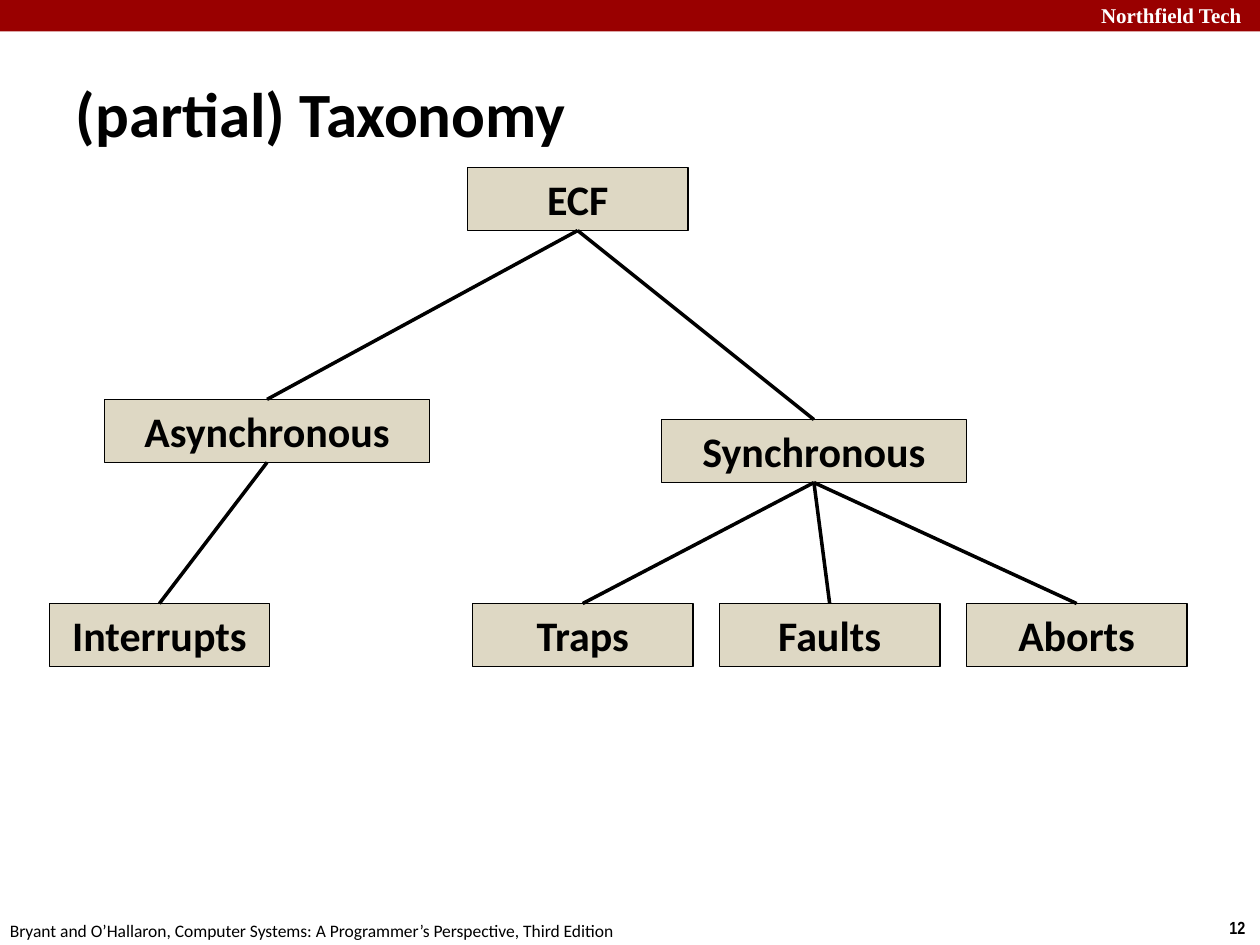
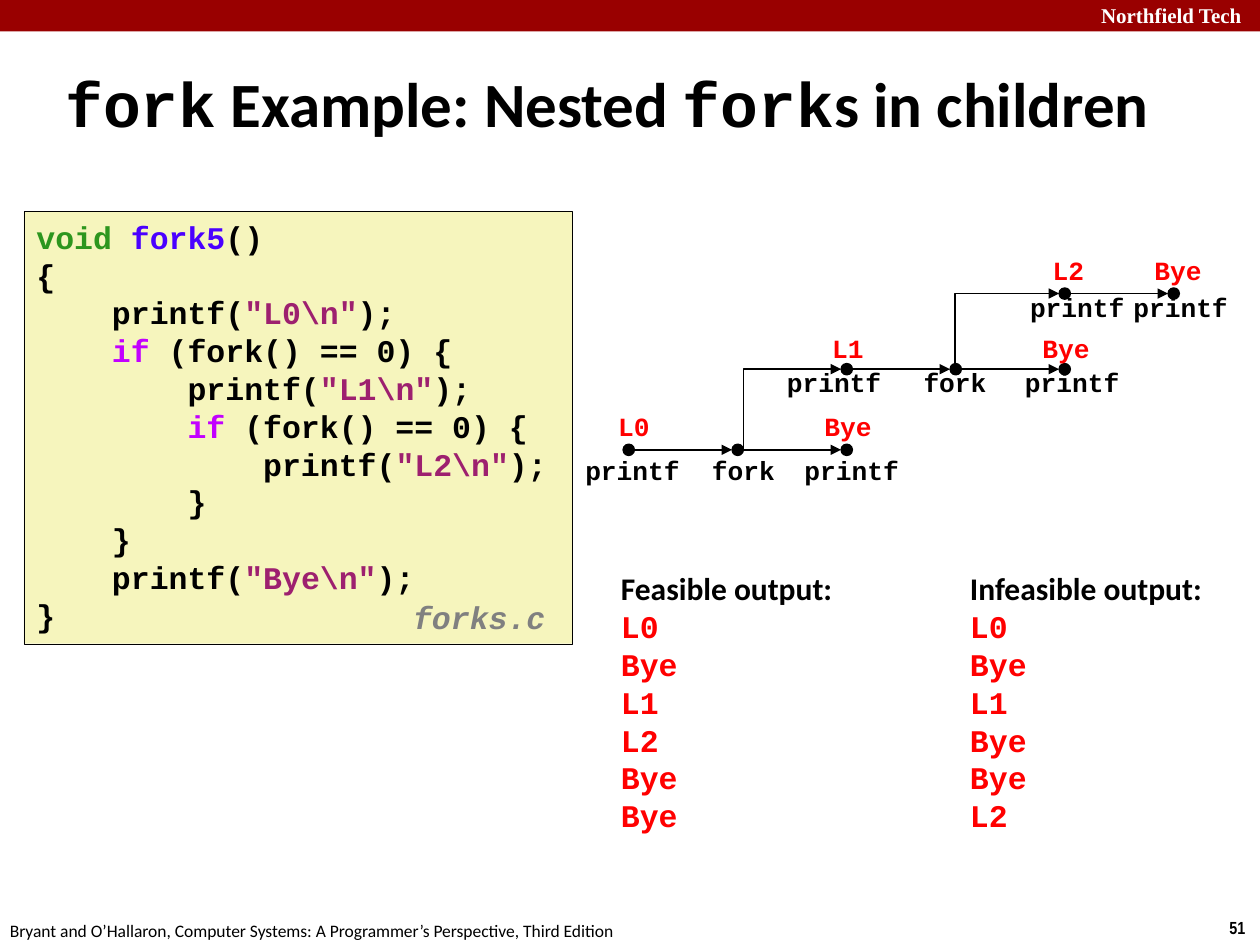
"""Builds two lecture slides: a control flow taxonomy and a nested fork example."""
from lxml.etree import SubElement
from pptx import Presentation
from pptx.dml.color import RGBColor as RGB
from pptx.enum.shapes import MSO_CONNECTOR as CONN, MSO_SHAPE as SHAPE
from pptx.enum.text import MSO_ANCHOR as ANCHOR, PP_ALIGN as ALIGN
from pptx.oxml.ns import qn
from pptx.util import Inches, Pt

BLACK, WHITE, RED = RGB(0, 0, 0), RGB(255, 255, 255), RGB(255, 0, 0)
BAND, TAN, CREAM = RGB(0x99, 0, 0), RGB(0xDE, 0xD8, 0xC4), RGB(0xF6, 0xF5, 0xBD)
GREEN, BLUE, GRAY = RGB(0x2D, 0x96, 0x1E), RGB(0x4A, 0, 0xFF), RGB(0x80, 0x80, 0x80)
PLUM, VIOLET = RGB(0x9D, 0x20, 0x6F), RGB(0xC2, 0, 0xFF)
SANS, MONO = "Calibri", "Courier New"

SCHOOL = "Northfield Tech"
BOOK = "Bryant and O’Hallaron, Computer Systems: A Programmer’s Perspective, Third Edition"

TAXONOMY = {"title": [(" (partial) Taxonomy",)], "box": (0.39, 0.48, 8.3, 0.83), "page": "12"}
FORKS = {
    "title": [("fork", {"name": MONO}), (" Example: Nested ",),
              ("fork", {"name": MONO}), ("s in children",)],
    "box": (0.42, 0.5, 9.22, 0.63), "page": "51",
}

NODES = {
    "ECF": (3.71, 1.33, 1.75),
    "Asynchronous": (0.83, 3.17, 2.58),
    "Synchronous": (5.25, 3.33, 2.42),
    "Interrupts": (0.39, 4.79, 1.75),
    "Traps": (3.75, 4.79, 1.75),
    "Faults": (5.71, 4.79, 1.75),
    "Aborts": (7.67, 4.79, 1.75),
}
CHILDREN = {
    "ECF": ["Asynchronous", "Synchronous"],
    "Asynchronous": ["Interrupts"],
    "Synchronous": ["Traps", "Faults", "Aborts"],
}
NODE_H = 0.5

CODE = [
    [("void ", GREEN), ("fork5", BLUE), ("()", BLACK)],
    [("{", BLACK)],
    [("    printf(", BLACK), ('"L0\\n"', PLUM), (");", BLACK)],
    [("    ", BLACK), ("if", VIOLET), (" (fork() == 0) {", BLACK)],
    [("        printf(", BLACK), ('"L1\\n"', PLUM), (");", BLACK)],
    [("        ", BLACK), ("if", VIOLET), (" (fork() == 0) {", BLACK)],
    [("            printf(", BLACK), ('"L2\\n"', PLUM), (");", BLACK)],
    [("        }", BLACK)],
    [("    }", BLACK)],
    [("    printf(", BLACK), ('"Bye\\n"', PLUM), (");", BLACK)],
    [("}", BLACK)],
]

PROCESSES = [
    {"y": 3.57, "call_top": 3.56, "out_top": 3.21, "first_col": 0, "bend_x": 5.9,
     "events": [("printf", 5.02, "L0", 5.03), ("fork", 5.9, "", 0), ("printf", 6.76, "Bye", 6.73)]},
    {"y": 2.93, "call_top": 2.86, "out_top": 2.59, "first_col": 2, "bend_x": 7.58,
     "events": [("printf", 6.62, "L1", 6.73), ("fork", 7.58, "", 0), ("printf", 8.51, "Bye", 8.46)]},
    {"y": 2.33, "call_top": 2.26, "out_top": 1.97, "first_col": 4, "bend_x": None,
     "events": [("printf", 8.55, "L2", 8.48), ("printf", 9.37, "Bye", 9.35)]},
]
COL_X, COL_STEP, DOT = 4.99, 0.865, 0.09

OUTPUTS = [
    ("Feasible output:", "L0 Bye L1 L2 Bye Bye", (4.83, 4.47, 1.9, 2.22)),
    ("Infeasible output:", "L0 Bye L1 Bye Bye L2", (7.6, 4.47, 2.07, 2.22)),
]


def inches(*values):
    return [Inches(v) for v in values]


def write(sp, lines, align=ALIGN.LEFT, wrap=False, anchor=ANCHOR.TOP, **font):
    """Fills a shape with lines, each a list of (text, font changes) runs."""
    tf = sp.text_frame
    tf.word_wrap, tf.vertical_anchor = wrap, anchor
    for i, line in enumerate(lines):
        p = tf.paragraphs[0] if i == 0 else tf.add_paragraph()
        p.alignment = align
        for text, *changes in line:
            r = p.add_run()
            r.text = text
            fmt = {"name": SANS, "bold": True, "color": BLACK, **font}
            for change in changes:
                fmt.update(change)
            r.font.color.rgb = fmt.pop("color")
            for key, value in fmt.items():
                setattr(r.font, key, value)
    return tf


def add_text(s, box, lines, **fmt):
    return write(s.shapes.add_textbox(*inches(*box)), lines, **fmt)


def add_shape(s, kind, box, fill, line=None):
    sp = s.shapes.add_shape(kind, *inches(*box))
    sp.shadow.inherit = False
    sp.fill.solid()
    sp.fill.fore_color.rgb = fill
    if line:
        sp.line.color.rgb, sp.line.width = BLACK, Pt(line)
    else:
        sp.line.fill.background()
    return sp


def add_line(s, start, end, width, arrow=False, kind=CONN.STRAIGHT):
    c = s.shapes.add_connector(kind, *inches(*start, *end))
    c.line.color.rgb, c.line.width = BLACK, Pt(width)
    if arrow:
        SubElement(c.line._get_or_add_ln(), qn("a:tailEnd"), type="triangle")
    SubElement(c._element.spPr, qn("a:effectLst"))
    return c


def add_up_right_arrow(s, x1, y1, x2, y2):
    """Draws a bent arrow that goes up and then right."""
    cx, cy = (x1 + x2) / 2, (y1 + y2) / 2
    half_w, half_h = (y1 - y2) / 2, (x2 - x1) / 2
    c = add_line(s, (cx + half_w, cy + half_h), (cx - half_w, cy - half_h), 1, True, CONN.ELBOW)
    sp_pr = c._element.spPr
    sp_pr.find(qn("a:xfrm")).set("rot", "5400000")
    sp_pr.find(qn("a:prstGeom")).set("prst", "bentConnector2")


def add_slide(prs, content):
    s = prs.slides.add_slide(prs.slide_layouts[6])
    add_shape(s, SHAPE.RECTANGLE, (0, 0, 10, 0.25), BAND)
    add_text(s, (8.64, -0.03, 1.43, 0.3), [[(SCHOOL,)]], wrap=True,
             name="Times New Roman", size=Pt(12), color=WHITE)
    add_text(s, (9.66, 7.23, 0.34, 0.27), [[(content["page"],)]], name="Arial Narrow", size=Pt(10))
    add_text(s, (-0.02, 7.25, 5.08, 0.27), [[(BOOK,)]], size=Pt(10), bold=False)
    tf = add_text(s, content["box"], [content["title"]], wrap=True, anchor=ANCHOR.MIDDLE, size=Pt(36))
    p_pr = tf.paragraphs[0]._p.get_or_add_pPr()
    p_pr.set("marL", str(Inches(0.13)))
    p_pr.set("indent", str(-Inches(0.13)))
    return s


def build_taxonomy(prs):
    s = add_slide(prs, TAXONOMY)
    boxes = {}
    for name, (x, y, w) in NODES.items():
        boxes[name] = add_shape(s, SHAPE.RECTANGLE, (x, y, w, NODE_H), TAN, 0.75)
        write(boxes[name], [[(name,)]], align=ALIGN.CENTER, wrap=True, size=Pt(24))
    for parent, children in CHILDREN.items():
        for child in children:
            c = add_line(s, (0, 0), (1, 1), 2)
            c.begin_connect(boxes[parent], 2)
            c.end_connect(boxes[child], 0)


def build_process_graph(s):
    label = {"align": ALIGN.CENTER, "name": MONO, "size": Pt(15)}
    r = DOT / 2
    for i, proc in enumerate(PROCESSES):
        y = proc["y"]
        for j, (call, call_x, out, out_x) in enumerate(proc["events"]):
            x = COL_X + (proc["first_col"] + j) * COL_STEP
            add_shape(s, SHAPE.OVAL, (x - r, y - r, DOT, DOT), BLACK, 0.75)
            add_text(s, (call_x - 0.48, proc["call_top"], 0.96, 0.35), [[(call,)]], **label)
            if out:
                add_text(s, (out_x - 0.29, proc["out_top"], 0.58, 0.35), [[(out,)]], color=RED, **label)
            if j:
                add_line(s, (x - COL_STEP + r, y), (x - r, y), 1, True)
        if proc["bend_x"]:
            child = PROCESSES[i + 1]
            child_x = COL_X + child["first_col"] * COL_STEP
            add_up_right_arrow(s, proc["bend_x"], y, child_x - r, child["y"])


def build_forks(prs):
    s = add_slide(prs, FORKS)
    listing = add_shape(s, SHAPE.RECTANGLE, (0.19, 1.68, 4.35, 3.43), CREAM, 0.25)
    lines = [[(text, {"color": color}) for text, color in line] for line in CODE]
    write(listing, lines, name=MONO, size=Pt(18))
    build_process_graph(s)
    for heading, words, box in OUTPUTS:
        lines = [[(heading,)]] + [[(w, {"name": MONO, "color": RED})] for w in words.split()]
        add_text(s, box, lines, size=Pt(18))
    tf = add_text(s, (3.18, 4.72, 1.32, 0.39), [[("forks.c",)]],
                  name=MONO, size=Pt(18), color=GRAY, italic=True)
    tf.paragraphs[0].line_spacing = 0.94


def main():
    prs = Presentation()
    prs.slide_width, prs.slide_height = inches(10, 7.5)
    build_taxonomy(prs)
    build_forks(prs)
    prs.save("out.pptx")


if __name__ == "__main__":
    main()
